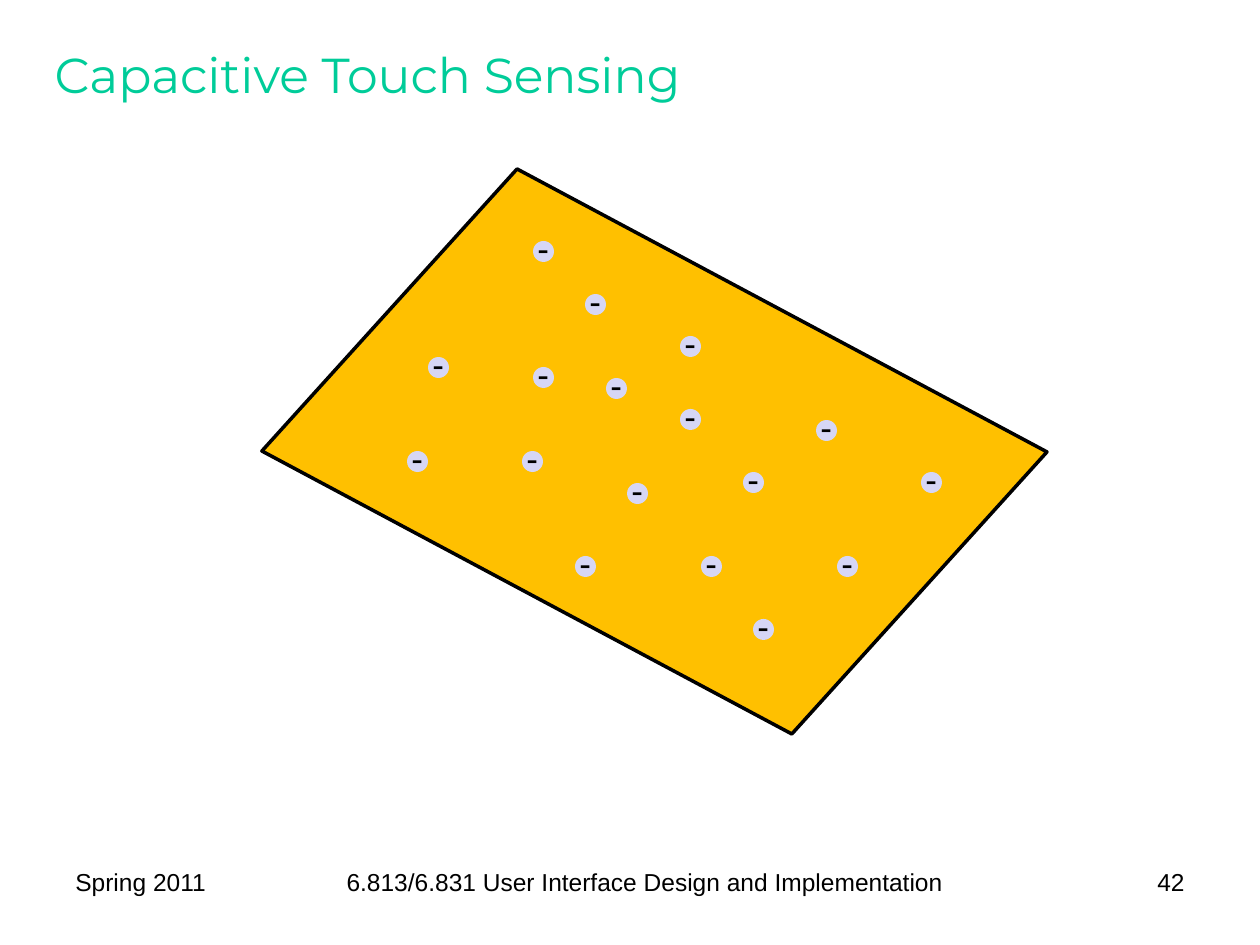
"""Build the slide on capacitive touch sensing."""
from typing import NamedTuple

from pptx import Presentation
from pptx.dml.color import RGBColor
from pptx.enum.shapes import MSO_SHAPE
from pptx.enum.text import MSO_ANCHOR, MSO_AUTO_SIZE, PP_ALIGN
from pptx.util import Emu, Pt

OVAL, PLATE = MSO_SHAPE.OVAL, MSO_SHAPE.PARALLELOGRAM
LEFT, MID, RIGHT = PP_ALIGN.LEFT, PP_ALIGN.CENTER, PP_ALIGN.RIGHT
TOP, CENTER = MSO_ANCHOR.TOP, MSO_ANCHOR.MIDDLE
GROW, FIXED = MSO_AUTO_SIZE.SHAPE_TO_FIT_TEXT, MSO_AUTO_SIZE.NONE
SCALE = 914400 / 126
BLACK, GREEN, GOLD, LILAC = "000000", "00CC99", "FFC000", "D6D6F5"
DOT = 21


class Box(NamedTuple):
    """A frame in px."""
    left: int
    top: int
    width: int
    height: int


class Note(NamedTuple):
    """A footer text."""
    text: str
    box: Box
    align: PP_ALIGN


class Charge(NamedTuple):
    """The top left corner of an electron in px."""
    left: int
    top: int


NOTES = [
    Note("Spring 2011", Box(63, 861, 189, 66), LEFT),
    Note("6.813/6.831 User Interface Design and Implementation",
         Box(262, 861, 766, 66), MID),
    Note("42", Box(1040, 861, 157, 66), RIGHT),
]
CHARGES = [Charge(*spot) for spot in [
    (533, 367), (407, 451), (522, 451), (753, 619), (533, 241), (680, 409),
    (627, 483), (701, 556), (921, 472), (743, 472), (606, 378), (837, 556),
    (575, 556), (428, 357), (585, 294), (680, 336), (816, 420),
]]


def px(size: int) -> Emu:
    """Turn px into EMU."""
    return Emu(round(size * SCALE))


def color(code: str) -> RGBColor:
    """Turn a hex string into a colour."""
    return RGBColor.from_string(code)


def place(shape, box: Box) -> None:
    """Move a shape to its box."""
    shape.left, shape.top, shape.width, shape.height = map(px, box)


def write(shape, text: str, *, size: int = 14, font: str = "Arial",
          fill: str = BLACK, align: PP_ALIGN = LEFT, anchor: MSO_ANCHOR = TOP,
          wrap: bool = True, fit: MSO_AUTO_SIZE = FIXED) -> None:
    """Put formatted text in a shape."""
    frame = shape.text_frame
    frame.word_wrap, frame.auto_size = wrap, fit
    frame.vertical_anchor = anchor
    line = frame.paragraphs[0]
    line.alignment = align
    run = line.add_run()
    run.text = text
    run.font.size, run.font.name = Pt(size), font
    run.font.color.rgb = color(fill)


def draw(shapes, kind: MSO_SHAPE, box: Box, fill: str):
    """Add a filled shape with no line or shadow."""
    shape = shapes.add_shape(kind, *map(px, box))
    shape.shadow.inherit = False
    shape.fill.solid()
    shape.fill.fore_color.rgb = color(fill)
    shape.line.fill.background()
    return shape


def add_plate(shapes) -> None:
    """Add the tilted touch surface."""
    plate = draw(shapes, PLATE, Box(308, 267, 693, 369), GOLD)
    plate.rotation = 28.1
    plate.line.color.rgb = color(BLACK)
    plate.line.width = Pt(2)


def add_charge(shapes, spot: Charge) -> None:
    """Add an electron as a dot grouped with its sign."""
    group = shapes.add_group_shape().shapes
    draw(group, OVAL, Box(*spot, DOT, DOT), LILAC)
    box = Box(spot.left - 8, spot.top - 21, 37, 55)
    sign = group.add_textbox(*map(px, box))
    write(sign, "-", size=20, wrap=False, fit=GROW)


def main() -> None:
    """Build and save the slide."""
    deck = Presentation()
    deck.slide_width, deck.slide_height = px(1260), px(945)
    slide = deck.slides.add_slide(deck.slide_layouts[5])
    shapes = slide.shapes
    place(shapes.title, Box(42, 21, 1166, 105))
    write(shapes.title, "Capacitive Touch Sensing", size=28,
          font="Montserrat", fill=GREEN, anchor=CENTER)
    for note in NOTES:
        write(shapes.add_textbox(*map(px, note.box)), note.text,
              align=note.align)
    add_plate(shapes)
    for spot in CHARGES:
        add_charge(shapes, spot)
    deck.save("out.pptx")


if __name__ == "__main__":
    main()
